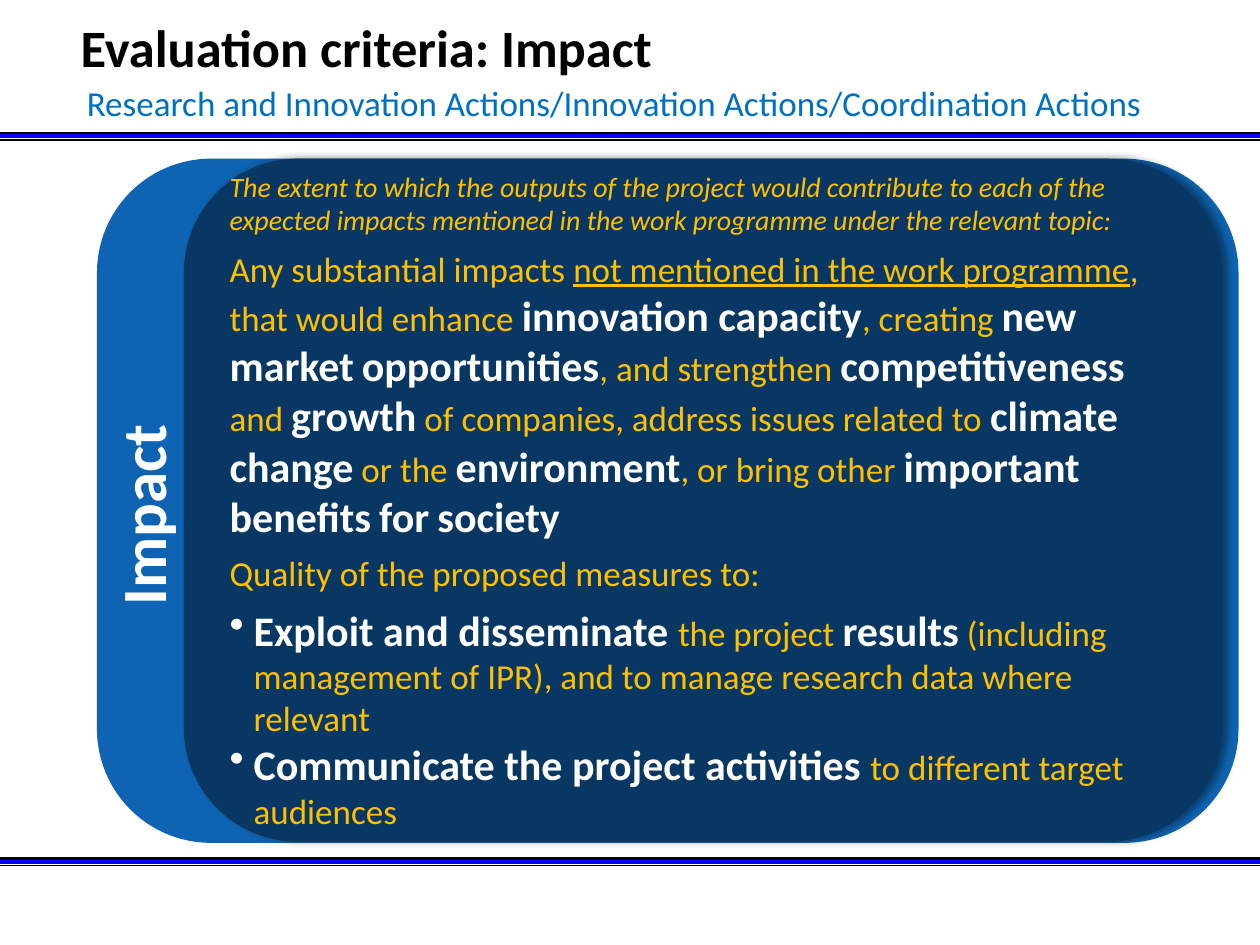
"""Build the slide on the impact evaluation criterion."""
from lxml import etree
from pptx import Presentation
from pptx.dml.color import RGBColor
from pptx.enum.shapes import MSO_CONNECTOR, MSO_SHAPE
from pptx.enum.text import MSO_ANCHOR, PP_ALIGN
from pptx.oxml import parse_xml
from pptx.oxml.ns import nsdecls, qn
from pptx.util import Inches, Pt

STRAIGHT = MSO_CONNECTOR.STRAIGHT
ROUNDED = MSO_SHAPE.ROUNDED_RECTANGLE
MIDDLE = MSO_ANCHOR.MIDDLE
LEFT, CENTER = PP_ALIGN.LEFT, PP_ALIGN.CENTER

BLACK = RGBColor(0x00, 0x00, 0x00)
WHITE = RGBColor(0xFF, 0xFF, 0xFF)
RULE_BLUE = RGBColor(0x00, 0x00, 0xFF)
SUBTITLE_BLUE = RGBColor(0x00, 0x70, 0xC0)
BAND_BLUE = RGBColor(0x0E, 0x64, 0xB2)
PANEL_NAVY = RGBColor(0x08, 0x37, 0x63)
GOLD = RGBColor(0xFF, 0xC0, 0x00)

presentation = Presentation()
presentation.slide_width = Inches(10)
presentation.slide_height = Inches(7.5)
slide = presentation.slides.add_slide(presentation.slide_layouts[6])
shapes = slide.shapes


def percent_box(left, top, width, height):
    across = presentation.slide_width / 100
    down = presentation.slide_height / 100
    return int(left * across), int(top * down), int(width * across), int(height * down)


def style_run(run, size, color, bold=False, italic=False):
    run.font.name = "Calibri"
    run.font.size = Pt(size)
    run.font.color.rgb = color
    run.font.bold = bold
    run.font.italic = italic


RULES = [(0, BLACK, 2.25), (0.67, BLACK, 1), (0.31, RULE_BLUE, 2.25)]
for rule_top in (14.13, 90.93):
    for offset, color, weight in RULES:
        left, top, width, height = percent_box(0, rule_top + offset, 100, 0)
        rule = shapes.add_connector(STRAIGHT, left, top, left + width, top)
        rule.line.color.rgb = color
        rule.line.width = Pt(weight)
        etree.SubElement(rule._element.spPr, qn("a:effectLst"))

panels = []
for box, color in [((7.7, 16.8, 90.6, 72.4), BAND_BLUE),
                   ((14.6, 16.8, 82.4, 72.27), PANEL_NAVY)]:
    panel = shapes.add_shape(ROUNDED, *percent_box(*box))
    panel.shadow.inherit = False
    panel.fill.solid()
    panel.fill.fore_color.rgb = color
    panel.line.fill.background()
    panels.append(panel)

criteria = panels[-1]
criteria._element.spPr.find(qn("a:effectLst")).append(parse_xml(
    f'<a:outerShdw {nsdecls("a")} blurRad="{Pt(4)}" dist="{Pt(3)}" dir="0">'
    '<a:srgbClr val="000000"><a:alpha val="40000"/></a:srgbClr></a:outerShdw>'))

LABELS = [
    ("Evaluation criteria: Impact", (5.9, 1.73, 90, 13.6), 30, BLACK, True, 0.05, LEFT),
    ("Research and Innovation Actions/Innovation Actions/Coordination Actions",
     (5.9, 8, 92.9, 5.87), 20, SUBTITLE_BLUE, False, 0.1, LEFT),
    ("Impact", (7.7, 18.27, 6.9, 72.4), 36, WHITE, True, 0.1, CENTER),
]
for text, box, size, color, bold, inset, alignment in LABELS:
    label = shapes.add_textbox(*percent_box(*box))
    frame = label.text_frame
    frame.word_wrap = True
    frame.margin_left = frame.margin_right = Inches(inset)
    frame.text = text
    frame.paragraphs[0].alignment = alignment
    style_run(frame.paragraphs[0].runs[0], size, color, bold)
    if size == 30:
        frame.paragraphs[0].line_spacing = 0.9
    if size == 36:
        frame.word_wrap = False
        frame._txBody.bodyPr.set("vert", "vert270")

UNDERLINED = "not mentioned in the work programme"
PARAGRAPHS = [
    ("The extent to which the outputs of the project would contribute to each of the "
     "expected impacts mentioned in the work programme under the relevant topic:",
     16, 0, False),
    (f"Any substantial impacts ||{UNDERLINED}||, that would enhance |innovation capacity"
     "|, creating |new| |market| |opportunities|, and strengthen |competitiveness"
     "| and |growth| of companies, address issues related to |climate| |change"
     "| or the |environment|, or bring other |important| |benefits| |for| |society",
     20, 6, False),
    ("Quality of the proposed measures to:", 20, 6, False),
    ("|Exploit and disseminate |the project |results| (including management of IPR), "
     "and to manage research data where relevant", 20, 6, True),
    ("|Communicate the project activities |to different target audiences", 20, 0, True),
]
frame = criteria.text_frame
frame.word_wrap = True
frame.vertical_anchor = MIDDLE
for index, (text, size, space_before, bulleted) in enumerate(PARAGRAPHS):
    paragraph = frame.paragraphs[0] if index == 0 else frame.add_paragraph()
    paragraph.alignment = LEFT
    paragraph.space_before = Pt(space_before)
    if bulleted:
        properties = paragraph._p.get_or_add_pPr()
        properties.set("marL", str(Inches(0.19)))
        properties.set("indent", str(-Inches(0.19)))
        etree.SubElement(properties, qn("a:buChar")).set("char", "•")
    for position, part in enumerate(text.split("|")):
        if part:
            strong = position % 2 == 1
            run = paragraph.add_run()
            run.text = part
            style_run(run, 24 if strong else size, WHITE if strong else GOLD,
                      strong, index == 0)
            run.font.underline = part == UNDERLINED

presentation.save("out.pptx")
